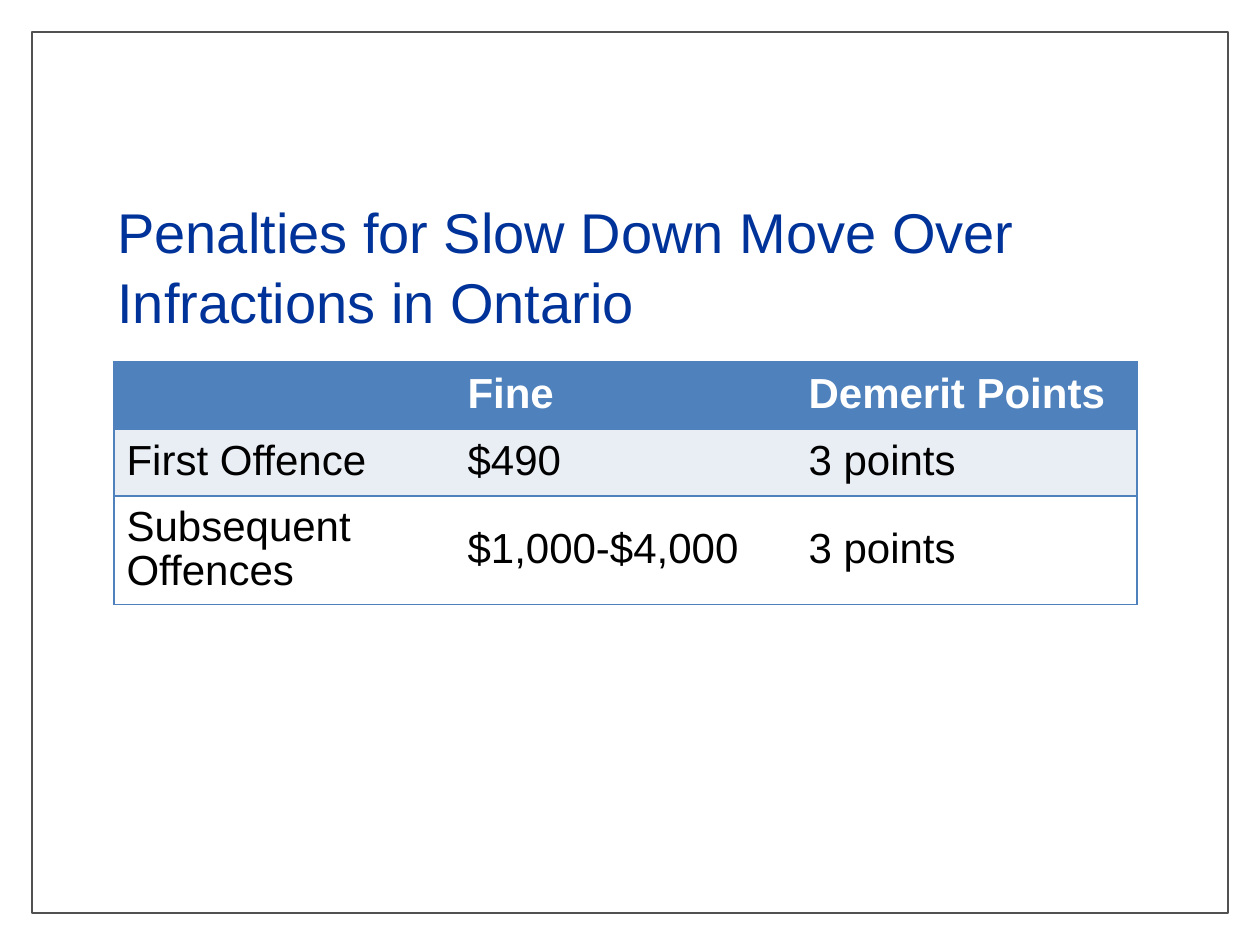
from dataclasses import dataclass

from lxml import etree
from pptx import Presentation
from pptx import util as u
from pptx.dml.color import RGBColor
from pptx.enum import shapes, text
from pptx.oxml.ns import qn

TITLE = "Penalties for Slow Down Move Over Infractions in Ontario"
PENALTIES = [
    ["", "Fine", "Demerit Points"],
    ["First Offence", "$490", "3 points"],
    ["Subsequent Offences", "$1,000-$4,000", "3 points"],
]
ROW_FILLS = ["4F81BD", "E9EDF4", "FFFFFF"]
ROW_HEIGHTS = [67, 67, 106]
COLUMN_WIDTH = 341
TABLE_LEFT, TABLE_TOP = 114, 362
PAGE_WIDTH, PAGE_HEIGHT, FRAME_MARGIN = 1260, 945, 32
TITLE_BOX = (105, 224, 1050, 81)


@dataclass(frozen=True)
class Theme:
    font: str = "Arial"
    title_size: int = 32
    cell_size: int = 24
    title: str = "003399"
    header_text: str = "FFFFFF"
    body_text: str = "000000"
    rule: str = "4F81BD"
    frame: str = "505150"


THEME = Theme()


def px(count):
    return u.Emu(count * u.Inches(1) // 126)


def style(para, size, color, bold=False):
    for span in para.runs:
        span.font.name = THEME.font
        span.font.size = u.Pt(size)
        span.font.bold = bold
        span.font.color.rgb = RGBColor.from_string(color)


def set_borders(cell, visible):
    """Rule the sides named in visible (out of L, R, T, B) and clear the others."""
    props = cell._tc.get_or_add_tcPr()
    for side in "LRTB":
        line = etree.SubElement(props, qn(f"a:ln{side}"), w=str(u.Pt(1)))
        if side in visible:
            fill = etree.SubElement(line, qn("a:solidFill"))
            etree.SubElement(fill, qn("a:srgbClr"), val=THEME.rule)
        else:
            etree.SubElement(line, qn("a:noFill"))


def add_frame(page):
    frame = page.shapes.add_shape(
        shapes.MSO_SHAPE.RECTANGLE, px(FRAME_MARGIN), px(FRAME_MARGIN),
        px(PAGE_WIDTH - 2 * FRAME_MARGIN), px(PAGE_HEIGHT - 2 * FRAME_MARGIN))
    frame.shadow.inherit = False
    frame.fill.background()
    frame.line.color.rgb = RGBColor.from_string(THEME.frame)
    frame.line.width = u.Pt(0.75)


def add_title(page):
    box = page.shapes.add_textbox(*map(px, TITLE_BOX))
    frame = box.text_frame
    frame.word_wrap = True
    frame.vertical_anchor = text.MSO_ANCHOR.MIDDLE
    frame.text = TITLE
    para = frame.paragraphs[0]
    para.line_spacing = 1.04
    style(para, THEME.title_size, THEME.title)


def add_penalties(page):
    columns = len(PENALTIES[0])
    table = page.shapes.add_table(
        len(PENALTIES), columns, px(TABLE_LEFT), px(TABLE_TOP),
        px(columns * COLUMN_WIDTH), px(sum(ROW_HEIGHTS))).table
    table.horz_banding = False
    for column in table.columns:
        column.width = px(COLUMN_WIDTH)
    for r, values in enumerate(PENALTIES):
        table.rows[r].height = px(ROW_HEIGHTS[r])
        header = r == 0
        color = THEME.header_text if header else THEME.body_text
        for c, value in enumerate(values):
            cell = table.cell(r, c)
            left = "L" if c == 0 else ""
            right = "R" if c == columns - 1 else ""
            set_borders(cell, "TB" + left + right)
            cell.fill.solid()
            cell.fill.fore_color.rgb = RGBColor.from_string(ROW_FILLS[r])
            cell.vertical_anchor = text.MSO_ANCHOR.MIDDLE
            cell.text_frame.text = value
            para = cell.text_frame.paragraphs[0]
            para.line_spacing = 0.95
            style(para, THEME.cell_size, color, header)


def main():
    deck = Presentation()
    deck.slide_width, deck.slide_height = px(PAGE_WIDTH), px(PAGE_HEIGHT)
    page = deck.slides.add_slide(deck.slide_layouts[6])
    add_frame(page)
    add_title(page)
    add_penalties(page)
    deck.save("out.pptx")


if __name__ == "__main__":
    main()
